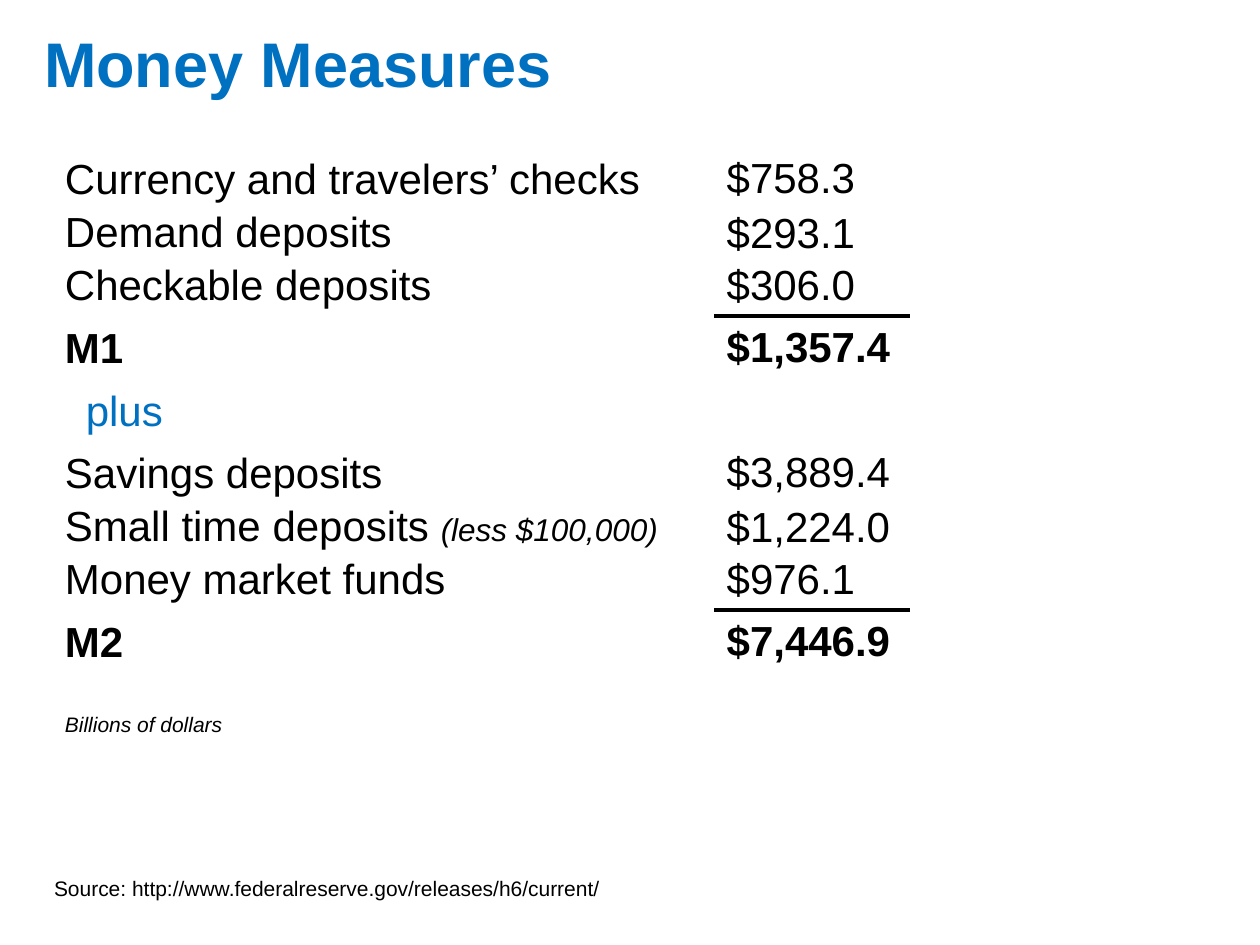
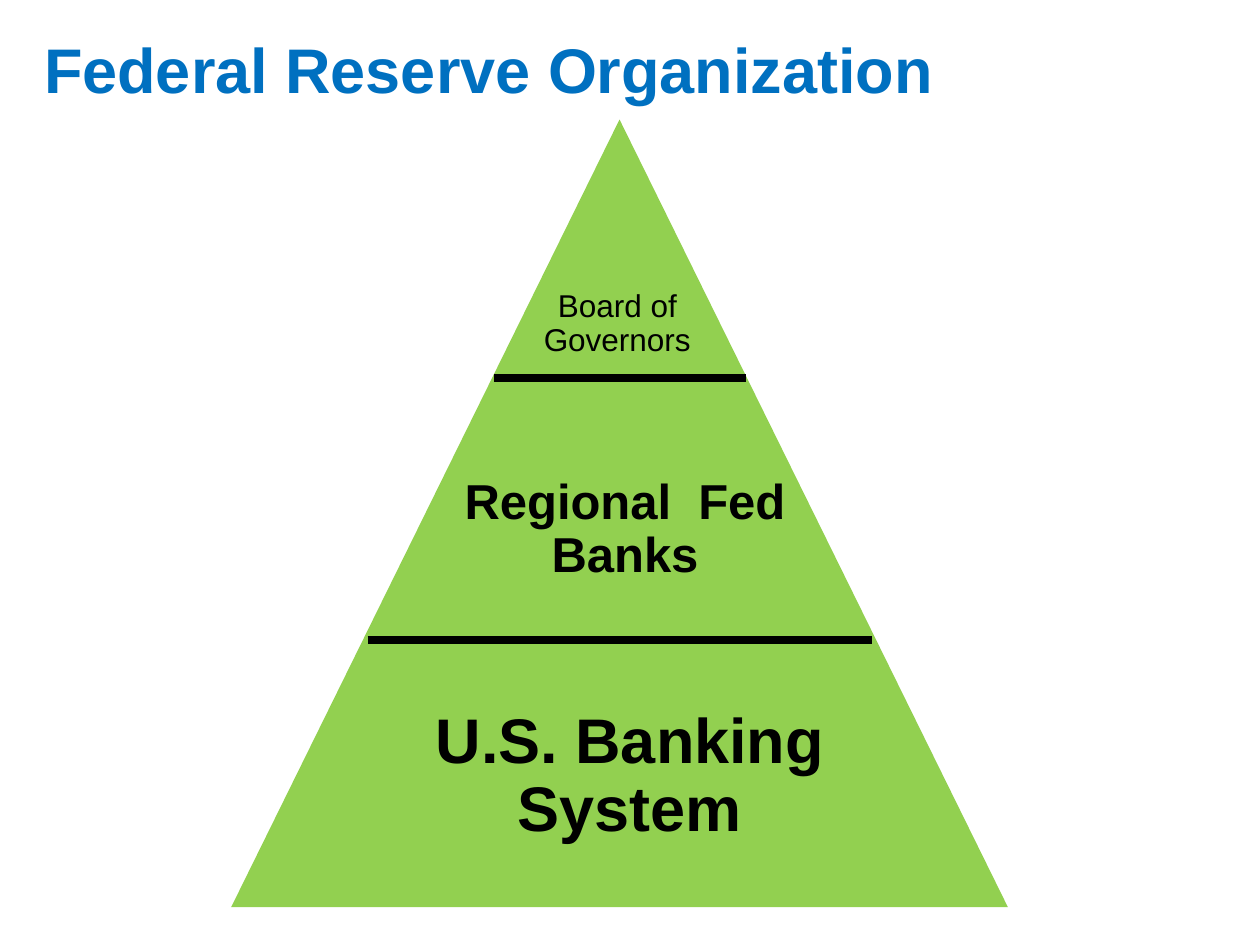
from dataclasses import dataclass

import pptx
import pptx.dml.color
import pptx.enum.shapes
import pptx.enum.text
import pptx.oxml.ns
import pptx.presentation
import pptx.slide
import pptx.util
from lxml import etree

Cm = pptx.util.Cm
Align = pptx.enum.text.PP_ALIGN
Anchor = pptx.enum.text.MSO_ANCHOR

COLORS = {"ink": "000000", "accent": "0070C0", "pyramid": "92D050"}
FONT = "Arial"
LABEL_LEFT, LABEL_WIDTH = 1.06, 12.7
VALUE_LEFT, VALUE_WIDTH = 14.4, 3.94
LABEL_TOPS = (3.15, 4.21, 5.28, 6.55)
VALUE_TOPS = (3.12, 4.24, 5.28, 6.53)
RULE_TOP = 6.37
GROUP_STEP = 5.93
PYRAMID_CENTER = 12.49


@dataclass(frozen=True)
class Label:
    text: str
    left: float
    top: float
    width: float
    height: float = 1.06
    size: float = 24
    color: str = "ink"
    bold: bool = False
    italic: bool = False
    spacing: float = 0.8
    align: Align = Align.LEFT
    anchor: Anchor = Anchor.TOP
    note: str = ""


@dataclass(frozen=True)
class Rule:
    left: float
    top: float
    width: float
    weight: float


@dataclass(frozen=True)
class Entry:
    name: str
    value: str
    note: str = ""


MEASURES = (
    (
        Entry("Currency and travelers’ checks", "$758.3"),
        Entry("Demand deposits", "$293.1"),
        Entry("Checkable deposits", "$306.0"),
        Entry("M1", "$1,357.4"),
    ),
    (
        Entry("Savings deposits", "$3,889.4"),
        Entry("Small time deposits ", "$1,224.0", "(less $100,000)"),
        Entry("Money market funds", "$976.1"),
        Entry("M2", "$7,446.9"),
    ),
)

TIERS = (
    Label("Board of Governors", 10.69, 5.72, 3.51, 1.65, 18, spacing=0.9, align=Align.CENTER),
    Label("Regional  Fed Banks", 7.62, 9.5, 9.96, 2.41, 28, bold=True, spacing=0.9, align=Align.CENTER),
    Label("U.S. Banking System", 6.35, 14.17, 12.7, 3.02, 36, bold=True, spacing=0.9, align=Align.CENTER),
)

TIER_RULES = tuple(
    Rule(PYRAMID_CENTER - half, top, 2 * half, 4.5) for half, top in ((2.54, 7.62), (5.08, 12.9))
)


def rgb(name: str) -> pptx.dml.color.RGBColor:
    return pptx.dml.color.RGBColor.from_string(COLORS[name])


def draw_label(page: pptx.slide.Slide, label: Label) -> None:
    box = page.shapes.add_textbox(Cm(label.left), Cm(label.top), Cm(label.width), Cm(label.height))
    frame = box.text_frame
    frame.word_wrap = True
    frame.auto_size = pptx.enum.text.MSO_AUTO_SIZE.SHAPE_TO_FIT_TEXT
    frame.vertical_anchor = label.anchor
    para = frame.paragraphs[0]
    para.alignment = label.align
    para.line_spacing = label.spacing
    para.font.name = FONT
    para.font.size = pptx.util.Pt(label.size)
    para.font.bold = label.bold
    para.font.italic = label.italic
    para.font.color.rgb = rgb(label.color)
    para.add_run().text = label.text
    if label.note:
        span = para.add_run()
        span.text = label.note
        span.font.size = pptx.util.Pt(18)
        span.font.italic = True


def draw_title(page: pptx.slide.Slide, text: str, width: float, height: float, spacing: float) -> None:
    draw_label(page, Label(text, 0.64, 0.64, width, height, 36, "accent", bold=True,
                           spacing=spacing, anchor=Anchor.MIDDLE))


def draw_rule(page: pptx.slide.Slide, rule: Rule) -> None:
    line = page.shapes.add_connector(
        pptx.enum.shapes.MSO_CONNECTOR.STRAIGHT,
        Cm(rule.left), Cm(rule.top), Cm(rule.left + rule.width), Cm(rule.top),
    )
    line.line.color.rgb = rgb("ink")
    line.line.width = pptx.util.Pt(rule.weight)
    etree.SubElement(line._element.spPr, pptx.oxml.ns.qn("a:effectLst"))


def add_page(deck: pptx.presentation.Presentation) -> pptx.slide.Slide:
    return deck.slides.add_slide(deck.slide_layouts[6])


def build_money_measures(deck: pptx.presentation.Presentation) -> None:
    page = add_page(deck)
    draw_title(page, "Money Measures", 14.6, 1.5, 0.8)
    for index, group in enumerate(MEASURES):
        shift = index * GROUP_STEP
        for entry, label_top, value_top in zip(group, LABEL_TOPS, VALUE_TOPS):
            total = entry is group[-1]
            draw_label(page, Label(entry.name, LABEL_LEFT, label_top + shift, LABEL_WIDTH,
                                   bold=total, note=entry.note))
            draw_label(page, Label(entry.value, VALUE_LEFT, value_top + shift, VALUE_WIDTH, bold=total))
        draw_rule(page, Rule(VALUE_LEFT, RULE_TOP + shift, VALUE_WIDTH, 2))
    draw_label(page, Label("plus", 1.48, 7.82, LABEL_WIDTH, color="accent"))
    draw_label(page, Label("Billions of dollars", LABEL_LEFT, 14.27, 5.82, 0.71, 12,
                           italic=True, spacing=0.9))
    draw_label(page, Label("Source: http://www.federalreserve.gov/releases/h6/current/",
                           0.84, 17.58, 12.7, 0.71, 12, spacing=0.9))


def build_organization(deck: pptx.presentation.Presentation) -> None:
    page = add_page(deck)
    pyramid = page.shapes.add_shape(
        pptx.enum.shapes.MSO_SHAPE.ISOSCELES_TRIANGLE, Cm(4.66), Cm(2.41), Cm(15.66), Cm(15.88)
    )
    pyramid.shadow.inherit = False
    pyramid.fill.solid()
    pyramid.fill.fore_color.rgb = rgb("pyramid")
    pyramid.line.fill.background()
    for rule in TIER_RULES:
        draw_rule(page, rule)
    draw_title(page, "Federal Reserve Organization", 21.8, 1.65, 0.9)
    for tier in TIERS:
        draw_label(page, tier)


def main() -> None:
    deck = pptx.Presentation()
    deck.slide_width = Cm(25.4)
    deck.slide_height = Cm(19.05)
    build_money_measures(deck)
    build_organization(deck)
    deck.save("out.pptx")


if __name__ == "__main__":
    main()
